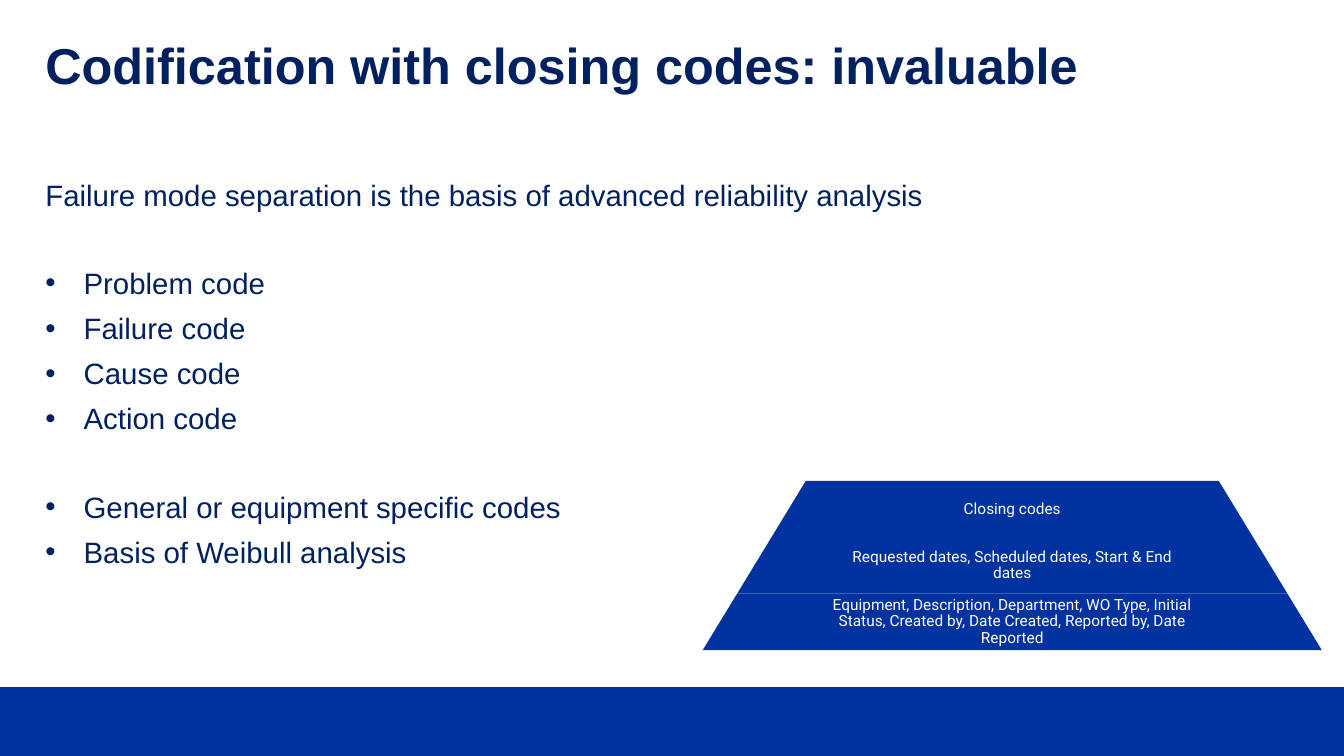
from pptx import Presentation
from pptx import util as u
from pptx.dml.color import RGBColor
from pptx.enum import shapes, text
from pptx.oxml.ns import qn
from lxml import etree

PX = 9144  # 100 px to the inch
NAVY, BLUE, WHITE = "002060", "0033A0", "FFFFFF"

TITLE = "Codification with closing codes: invaluable"
LEAD = "Failure mode separation is the basis of advanced reliability analysis"
CODE_GROUPS = [
    ["Problem code", "Failure code", "Cause code", "Action code"],
    ["General or equipment specific codes", "Basis of Weibull analysis"],
]
TIERS = [
    "Closing codes",
    "Requested dates, Scheduled dates, Start & End dates",
    "Equipment, Description, Department, WO Type, Initial Status, "
    "Created by, Date Created, Reported by, Date Reported",
]

TITLE_FONT = {"name": "Arial", "size": u.Pt(36), "bold": True}
BODY_FONT = {"name": "Arial", "size": u.Pt(21)}
TIER_FONT = {"name": "Roboto", "size": u.Pt(11)}
BODY_SPACING = {"line_spacing": 1.04, "space_after": u.Pt(6)}
GROUP_GAP = u.Pt(31)
TIER_SPACING = {"line_spacing": 0.9, "alignment": text.PP_ALIGN.CENTER}


def colour(hex_string):
    return RGBColor.from_string(hex_string)


def scaled(*lengths):
    return [u.Emu(round(length * PX)) for length in lengths]


def apply(target, values):
    for name, value in values.items():
        setattr(target, name, value)


def add_frame(slide, box, inset=0, anchor=text.MSO_ANCHOR.TOP):
    frame = slide.shapes.add_textbox(*scaled(*box)).text_frame
    margin = scaled(inset)[0]
    apply(frame, {"word_wrap": True, "vertical_anchor": anchor,
                  "margin_left": margin, "margin_right": margin,
                  "margin_top": margin, "margin_bottom": margin})
    return frame


def write(paragraph, words, font, ink, spacing):
    apply(paragraph, spacing)
    run = paragraph.add_run()
    run.text = words
    apply(run.font, font)
    run.font.color.rgb = colour(ink)


def add_bullet(paragraph, indent):
    properties = paragraph._p.get_or_add_pPr()
    width = scaled(indent)[0]
    properties.set("marL", str(width))
    properties.set("indent", str(-width))
    etree.SubElement(properties, qn("a:buFont")).set("typeface", "Arial")
    etree.SubElement(properties, qn("a:buChar")).set("char", "•")


def add_block(slide, preset, box):
    block = slide.shapes.add_shape(preset, *scaled(*box))
    block.shadow.inherit = False
    block.fill.solid()
    block.fill.fore_color.rgb = colour(BLUE)
    block.line.fill.background()
    return block


def add_title(slide, box):
    write(add_frame(slide, box).paragraphs[0], TITLE, TITLE_FONT, NAVY,
          {"line_spacing": 0.9})


def add_body(slide, box):
    frame = add_frame(slide, box)
    write(frame.paragraphs[0], LEAD, BODY_FONT, NAVY, BODY_SPACING)
    for group in CODE_GROUPS:
        for position, code in enumerate(group):
            item = frame.add_paragraph()
            add_bullet(item, 38)
            write(item, code, BODY_FONT, NAVY, BODY_SPACING)
            if position == 0:
                item.space_before = GROUP_GAP


def add_pyramid(slide, box):
    left, top, width, height = box
    tier_height = height / len(TIERS)
    slope = 0.609  # horizontal run for each unit of height
    for row, words in enumerate(TIERS):
        inset = (len(TIERS) - 1 - row) * tier_height * slope
        tier_top, tier_width = top + row * tier_height, width - 2 * inset
        tier = add_block(slide, shapes.MSO_SHAPE.TRAPEZOID,
                         (left + inset, tier_top, tier_width, tier_height))
        tier.adjustments[0] = slope
        # Label takes the middle 65% of its tier
        label_width = tier_width * 0.65
        label_left = left + (width - label_width) / 2
        label = add_frame(slide, (label_left, tier_top, label_width, tier_height),
                          inset=2, anchor=text.MSO_ANCHOR.MIDDLE)
        write(label.paragraphs[0], words, TIER_FONT, WHITE, TIER_SPACING)


def add_footer(slide, box):
    footer = add_block(slide, shapes.MSO_SHAPE.RECTANGLE, box)
    footer.line.color.rgb = colour(BLUE)
    footer.line.width = u.Pt(1)


def main():
    deck = Presentation()
    deck.slide_width, deck.slide_height = scaled(1333, 750)
    slide = deck.slides.add_slide(deck.slide_layouts[6])
    add_footer(slide, (0, 682, 1333, 68))
    add_body(slide, (45, 174, 1244, 504))
    add_title(slide, (45, 41, 1244, 82))
    add_pyramid(slide, (697, 477, 614, 168))
    deck.save("out.pptx")


if __name__ == "__main__":
    main()
